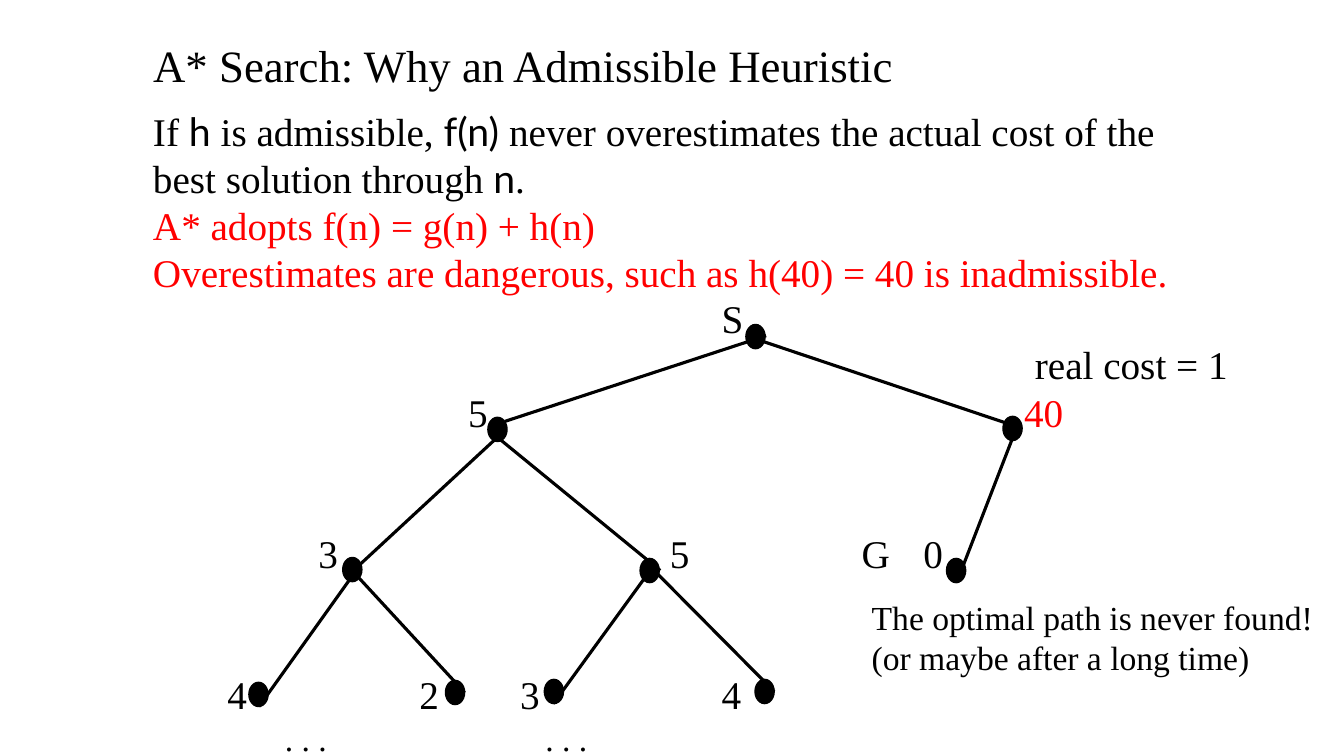
from lxml import etree
from pptx import Presentation
from pptx import util as u
from pptx.dml.color import RGBColor
from pptx.enum import shapes, text
from pptx.oxml import ns

BLACK = RGBColor(0, 0, 0)
RED = RGBColor(255, 0, 0)
SERIF, SANS = "Times New Roman", "Lato"
LINE_FACTOR = 1.2
INSETS = ("margin_left", "margin_top", "margin_right", "margin_bottom")

NODE_SIZE = (13.7, 17.3)
NODES = [
    (456.8, 25.8), (272.5, 92.1), (640.4, 91.4), (168.8, 192.2), (381.2, 192.9),
    (600.1, 192.9), (463.3, 279.3), (312.8, 279.3), (242.2, 280), (101.8, 281.4),
]
BRANCHES = [
    (456.8, 33.8, 654.1, 100), (471.2, 33.8, 284.7, 95),
    (285.4, 100.7, 171, 206.6), (395.6, 201.5, 276.8, 104.3),
    (650.5, 98.6, 607.3, 210.2), (178.9, 200.8, 109, 298.7),
    (255.9, 288.6, 178.2, 204.4), (319.3, 296.6, 388.4, 201.5),
    (477, 287.9, 390.6, 200.8),
]
LABEL_TOP, LABEL_PITCH = 4.2, 33.6
LABELS = [
    (0, 439.5, "S", BLACK, 28),
    (2, 258.5, "5", BLACK, 28), (2, 655.5, "40", RED, 28),
    (5, 151.5, "3", BLACK, 28), (5, 402.5, "5", BLACK, 28),
    (5, 539.5, "G", BLACK, 28), (5, 583.5, "0", BLACK, 28),
    (8, 86.5, "4", BLACK, 28), (8, 223.5, "2", BLACK, 28),
    (8, 295.5, "3", BLACK, 28), (8, 439.5, "4", BLACK, 28),
    (9, 127.5, ". . .", BLACK, 24), (9, 313.5, ". . .", BLACK, 24),
]


def place(shape, box):
    """Move and size a shape to a box given in points."""
    for name, length in zip(("left", "top", "width", "height"), box):
        setattr(shape, name, u.Pt(length))


def write(frame, paragraphs, size, inset=None):
    """Fill a frame with (colour, runs) paragraphs; each run is (text, font)."""
    settings = {"word_wrap": True, "auto_size": text.MSO_AUTO_SIZE.NONE,
                "vertical_anchor": text.MSO_ANCHOR.TOP}
    if inset is not None:
        settings.update({side: u.Pt(inset) for side in INSETS})
    for name, value in settings.items():
        setattr(frame, name, value)
    for index, (colour, runs) in enumerate(paragraphs):
        paragraph = frame.add_paragraph() if index else frame.paragraphs[0]
        layout = {"alignment": text.PP_ALIGN.LEFT, "space_before": u.Pt(0),
                  "line_spacing": u.Pt(round(size * LINE_FACTOR, 1))}
        for name, value in layout.items():
            setattr(paragraph, name, value)
        for words, font in runs:
            run = paragraph.add_run()
            run.text = words
            for name, value in {"name": font, "size": u.Pt(size)}.items():
                setattr(run.font, name, value)
            run.font.color.rgb = colour


def add_note(slide, box, paragraphs, size, inset=None):
    """Add a text box with the given paragraphs."""
    note = slide.shapes.add_textbox(*map(u.Pt, box))
    write(note.text_frame, paragraphs, size, inset)


def add_heading(slide, box):
    """Set the slide title."""
    title = slide.shapes.title
    place(title, box)
    write(title.text_frame,
          [(BLACK, [("A* Search: Why an Admissible Heuristic", SERIF)])], 32)


def add_explanation(slide, box):
    """Add the statement on admissibility and its red consequences."""
    add_note(slide, box, [
        (BLACK, [("If ", SERIF), ("h ", SANS), ("is admissible, ", SERIF),
                 ("f(n) ", SANS),
                 ("never overestimates the actual cost of the best solution through ", SERIF),
                 ("n", SANS), (".", SERIF)]),
        (RED, [("A* adopts f(n) = g(n) + h(n)", SERIF)]),
        (RED, [("Overestimates are dangerous, such as h(40) = 40 is inadmissible.", SERIF)]),
    ], 28)


def add_search_tree(slide, box):
    """Draw the labels, nodes and branches of the search tree."""
    left, top = box[:2]
    for row, x, words, colour, size in LABELS:
        spot = (left + x, top + LABEL_TOP + row * LABEL_PITCH, 36, LABEL_PITCH)
        add_note(slide, spot, [(colour, [(words, SERIF)])], size, 0)
    for x, y in NODES:
        node = slide.shapes.add_shape(
            shapes.MSO_SHAPE.OVAL, *map(u.Pt, (left + x, top + y, *NODE_SIZE)))
        node.shadow.inherit = False
        node.fill.solid()
        node.fill.fore_color.rgb = BLACK
        node.line.color.rgb = BLACK
        node.line.width = u.Pt(1)
    for x1, y1, x2, y2 in BRANCHES:
        ends = (left + x1, top + y1, left + x2, top + y2)
        branch = slide.shapes.add_connector(
            shapes.MSO_CONNECTOR.STRAIGHT, *map(u.Pt, ends))
        branch.line.color.rgb = BLACK
        branch.line.width = u.Pt(2.25)
        etree.SubElement(branch._element.spPr, ns.qn("a:effectLst"))


def add_remarks(slide, box):
    """Add the real cost and the conclusion beside the goal branch."""
    left, top, width, height = box
    add_note(slide, (left + 116.6, top, 161.3, 41),
             [(BLACK, [("real cost = 1", SERIF)])], 28)
    add_note(slide, (left, top + height - 65.5, width, 65.5),
             [(BLACK, [("The optimal path is never found! (or maybe after a long time)",
                        SERIF)])], 24)


def main():
    """Build and save the slide."""
    deck = Presentation()
    deck.slide_width, deck.slide_height = u.Pt(960), u.Pt(540)
    slide = deck.slides.add_slide(deck.slide_layouts[5])
    add_heading(slide, (102.2, 23, 752.4, 46))
    add_explanation(slide, (102.2, 73.4, 740.9, 143.3))
    add_search_tree(slide, (76, 206, 754.6, 342))
    add_remarks(slide, (615.6, 239.8, 333.4, 248.4))
    deck.save("out.pptx")


if __name__ == "__main__":
    main()
